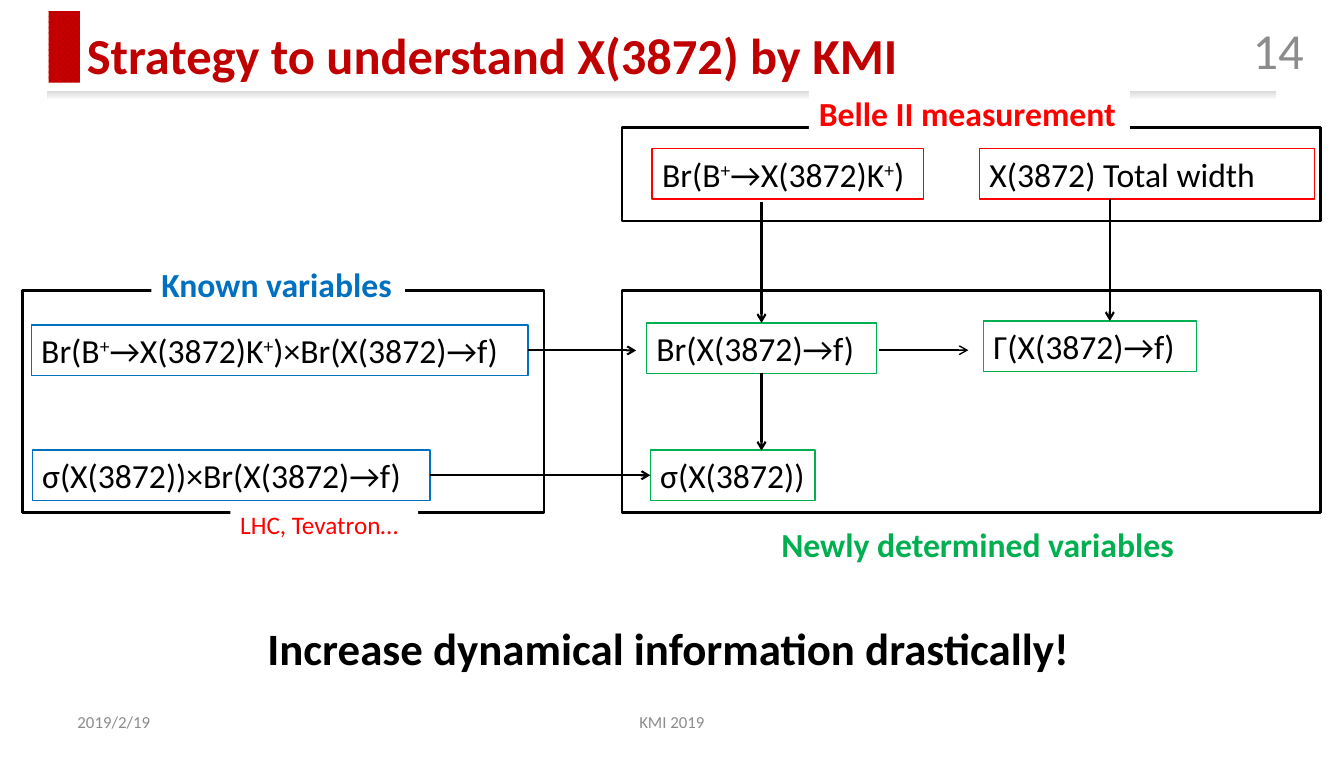
import lxml.etree
import pptx
import pptx.dml.color
import pptx.enum.dml
import pptx.enum.shapes
import pptx.enum.text
import pptx.oxml.ns
import pptx.util

Pt = pptx.util.Pt
qn = pptx.oxml.ns.qn
ALIGN = pptx.enum.text.PP_ALIGN
ANCHOR = pptx.enum.text.MSO_ANCHOR
FIT = pptx.enum.text.MSO_AUTO_SIZE
RECT = pptx.enum.shapes.MSO_SHAPE.RECTANGLE

COLORS = {
    "black": "000000", "white": "FFFFFF", "red": "FF0000", "blue": "0070C0",
    "green": "00B050", "title": "C00000", "title_light": "D60000",
    "muted": "8C8C8C", "shade": "D9D9D9",
}
TOP, LEFT, BOTTOM, RIGHT = range(4)


def rgb(name):
    return pptx.dml.color.RGBColor.from_string(COLORS[name])


def write(sp, text, size=24, color="black", bold=False, align=ALIGN.LEFT,
          anchor=ANCHOR.TOP, wrap=True, fit=FIT.NONE):
    """Fill a shape with one paragraph; text between ^ marks is superscript."""
    tf = sp.text_frame
    tf.word_wrap, tf.vertical_anchor, tf.auto_size = wrap, anchor, fit
    p = tf.paragraphs[0]
    p.alignment = align
    for i, part in enumerate(text.split("^")):
        r = p.add_run()
        r.text = part
        r.font.name, r.font.size, r.font.bold = "Calibri", Pt(size), bold
        r.font.color.rgb = rgb(color)
        if i % 2:
            r.font._element.set("baseline", "30000")


class Board:
    """The current slide and the style of its elements."""

    box_height = 36

    def __init__(self, slide):
        self.s = slide

    def title(self, text, x, y, w, h):
        sp = self.s.shapes.title
        sp.left, sp.top, sp.width, sp.height = map(Pt, (x, y, w, h))
        write(sp, text, size=36, color="title", bold=True, anchor=ANCHOR.MIDDLE)

    def rect(self, x, y, w, h, fill=None, line=None, weight=1):
        sp = self.s.shapes.add_shape(RECT, *map(Pt, (x, y, w, h)))
        sp.shadow.inherit = False
        if fill:
            sp.fill.solid()
            sp.fill.fore_color.rgb = rgb(fill)
        else:
            sp.fill.background()
        if line:
            sp.line.color.rgb = rgb(line)
            sp.line.width = Pt(weight)
        else:
            sp.line.fill.background()
        return sp

    def title_bar(self, x, y, w, h):
        fill = self.rect(x, y, w, h).fill
        fill.patterned()
        fill.pattern = pptx.enum.dml.MSO_PATTERN.SOLID_DIAMOND
        fill.fore_color.rgb = rgb("title_light")
        fill.back_color.rgb = rgb("title")

    def title_rule(self, x, y, w, h):
        sp = self.rect(x, y, w, h)
        sp.rotation = 180
        sp.fill.gradient()
        sp.fill.gradient_angle = 90
        for stop, name in zip(sp.fill.gradient_stops, ("shade", "white")):
            stop.color.rgb = rgb(name)
            stop.position = 0 if name == "shade" else 1

    def text(self, text, x, y, w, h, **fmt):
        write(self.s.shapes.add_textbox(*map(Pt, (x, y, w, h))), text, **fmt)

    def frame(self, x, y, w, h):
        self.rect(x, y, w, h, line="black", weight=2)

    def label(self, text, color, x, y, w, h=box_height, **fmt):
        sp = self.rect(x, y, w, h, fill="white")
        write(sp, text, color=color, fit=FIT.SHAPE_TO_FIT_TEXT, **fmt)

    def box(self, text, color, x, y, w):
        sp = self.rect(x, y, w, self.box_height, line=color)
        write(sp, text, fit=FIT.SHAPE_TO_FIT_TEXT)
        return sp

    def arrow(self, x1, y1, x2, y2, weight=1.5, begin=None, end=None):
        """begin and end are optional (shape, side) pairs to join."""
        c = self.s.shapes.add_connector(
            pptx.enum.shapes.MSO_CONNECTOR.STRAIGHT, *map(Pt, (x1, y1, x2, y2)))
        if begin:
            c.begin_connect(*begin)
        if end:
            c.end_connect(*end)
        c.line.color.rgb = rgb("black")
        c.line.width = Pt(weight)
        sp_pr = c.element.spPr
        lxml.etree.SubElement(sp_pr.find(qn("a:ln")), qn("a:tailEnd"), type="arrow")
        lxml.etree.SubElement(sp_pr, qn("a:effectLst"))


def main():
    prs = pptx.Presentation()
    prs.slide_width, prs.slide_height = Pt(958.32), Pt(540)
    b = Board(prs.slides.add_slide(prs.slide_layouts[5]))

    b.title_bar(34.6, 7.9, 22.3, 51.1)
    b.title_rule(33.8, 64.8, 876.2, 6.5)
    b.title("Strategy to understand X(3872) by KMI", 54.7, 13, 611.3, 51.1)
    small = dict(color="muted", anchor=ANCHOR.MIDDLE)
    b.text("14", 712.8, 20.9, 224, 28.8, size=36, align=ALIGN.RIGHT, **small)
    b.text("2019/2/19", 48.2, 500.4, 224, 28.8, size=12, **small)
    b.text("KMI 2019", 327.6, 500.4, 303, 28.8, size=12, align=ALIGN.CENTER, **small)

    b.frame(443.5, 90.7, 498.2, 67)
    b.frame(15.8, 207.4, 372.2, 158.4)
    b.frame(443.5, 207.4, 498.2, 158.4)

    heading = dict(bold=True, wrap=False)
    b.label("Belle II measurement", "red", 576.7, 62.6, 229, **heading)
    b.label("Known variables", "blue", 108, 185, 180.7, **heading)
    b.label("Newly determined variables", "green", 550, 370, 297.4, **heading)
    b.label("LHC, Tevatron…", "red", 164.2, 360, 133.9, 28.8, size=18)

    b.box("Br(B^+^→X(3872)K^+^)", "red", 465, 106, 193.7)
    b.box("X(3872) Total width", "red", 698.4, 106, 239)
    known_br = b.box("Br(B^+^→X(3872)K^+^)×Br(X(3872)→f)", "blue", 22.3, 232, 354.2)
    known_sigma = b.box("σ(X(3872))×Br(X(3872)→f)", "blue", 23, 321, 283.7)
    new_br = b.box("Br(X(3872)→f)", "green", 461, 230.4, 164)
    b.box("Γ(X(3872)→f)", "green", 701.3, 229, 152)
    new_sigma = b.box("σ(X(3872))", "green", 463.7, 321, 117.4)

    b.arrow(543, 144, 543, 230.4, end=(new_br, TOP))
    b.arrow(543, 266.4, 543, 321.5, begin=(new_br, BOTTOM))
    b.arrow(791.3, 142, 791.3, 229)
    b.arrow(376.5, 250, 453.6, 250, begin=(known_br, RIGHT))
    b.arrow(306.7, 339, 463.7, 339, begin=(known_sigma, RIGHT), end=(new_sigma, LEFT))
    b.arrow(627, 249.8, 690.5, 249.8, weight=1)

    b.text("Increase dynamical information drastically!", 183.6, 439.2, 591.8, 46,
           size=32, bold=True, wrap=False, fit=FIT.SHAPE_TO_FIT_TEXT)
    prs.save("out.pptx")


if __name__ == "__main__":
    main()
